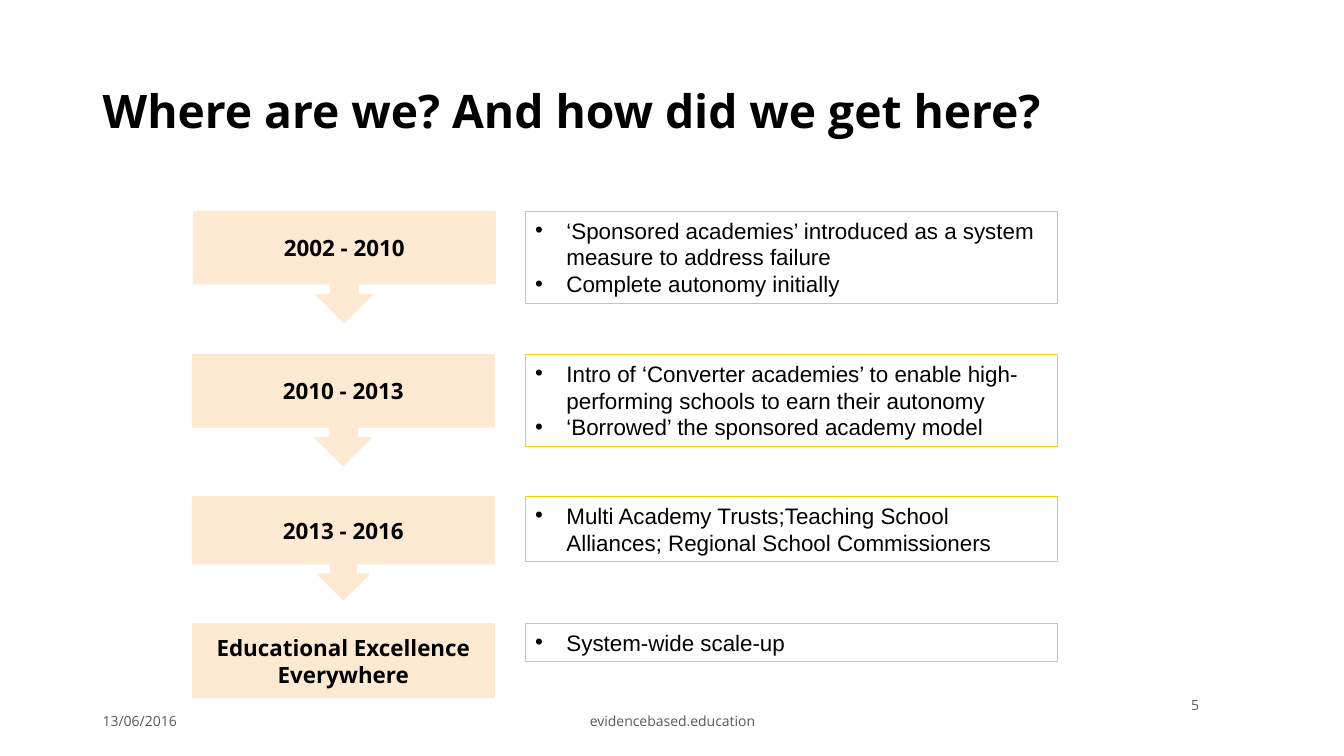
from lxml import etree
from pptx import Presentation
from pptx import util as u
from pptx.dml.color import RGBColor
from pptx.enum import shapes, text
from pptx.oxml.ns import qn

theme = {
    "peach": RGBColor.from_string("FEE9D2"),
    "gold": RGBColor.from_string("FFCA08"),
    "black": RGBColor.from_string("000000"),
    "gray": RGBColor.from_string("595959"),
    "head": {"name": "Open Sans", "size": u.Pt(33), "bold": True},
    "label": {"name": "Open Sans", "size": u.Pt(16), "bold": True},
    "body": {"name": "Arial", "size": u.Pt(16), "bold": False},
    "foot": {"name": "Open Sans", "size": u.Pt(10), "bold": False},
}
left, center, right = text.PP_ALIGN.LEFT, text.PP_ALIGN.CENTER, text.PP_ALIGN.RIGHT
middle, top = text.MSO_ANCHOR.MIDDLE, text.MSO_ANCHOR.TOP
rect = shapes.MSO_SHAPE.RECTANGLE
arrow = shapes.MSO_SHAPE.DOWN_ARROW_CALLOUT


def write(shape, lines, style, color="black", align=left, anchor=middle, bullet=False):
    frame = shape.text_frame
    frame.word_wrap = True
    frame.vertical_anchor = anchor
    for i, line in enumerate(lines):
        para = frame.add_paragraph() if i else frame.paragraphs[0]
        para.alignment = align
        if bullet:
            props = para._p.get_or_add_pPr()
            props.set("marL", str(u.Inches(0.31)))
            props.set("indent", str(-u.Inches(0.31)))
            etree.SubElement(props, qn("a:buFont")).set("typeface", "Arial")
            etree.SubElement(props, qn("a:buChar")).set("char", "•")
        run = para.add_run()
        run.text = line
        for key, value in theme[style].items():
            setattr(run.font, key, value)
        run.font.color.rgb = theme[color]


def block(kind, x, y, w, h, line, weight):
    shape = slide.shapes.add_shape(kind, *map(u.Inches, (x, y, w, h)))
    shape.shadow.inherit = False
    shape.fill.background()
    shape.line.color.rgb = theme[line]
    shape.line.width = u.Pt(weight)
    return shape


deck = Presentation()
deck.slide_width, deck.slide_height = u.Inches(13.33), u.Inches(7.5)
slide = deck.slides.add_slide(deck.slide_layouts[6])

title = slide.shapes.add_textbox(*map(u.Inches, (0.92, 0.4, 11.5, 1.45)))
write(title, ["Where are we? And how did we get here?"], "head")
title.text_frame.paragraphs[0].line_spacing = 0.9

footer = [
    (0.92, 6.95, 3, "13/06/2016", left),
    (4.42, 6.95, 4.5, "evidencebased.education", center),
    (8.99, 6.79, 3, "5", right),
]
for x, y, w, words, align in footer:
    box = slide.shapes.add_textbox(*map(u.Inches, (x, y, w, 0.4)))
    write(box, [words], "foot", "gray", align)

stages = [
    (arrow, 1.92, 2.1, 1.1, "2002 - 2010", 0.91, [
        "‘Sponsored academies’ introduced as a system measure to address failure",
        "Complete autonomy initially"]),
    (arrow, 1.91, 3.52, 1.1, "2010 - 2013", 0.91, [
        "Intro of ‘Converter academies’ to enable high-performing schools to earn their autonomy",
        "‘Borrowed’ the sponsored academy model"]),
    (arrow, 1.91, 4.93, 1.02, "2013 - 2016", 0.64, [
        "Multi Academy Trusts;Teaching School Alliances; Regional School Commissioners"]),
    (rect, 1.91, 6.19, 0.73, "Educational Excellence Everywhere", 0.37, [
        "System-wide scale-up"]),
]
for kind, x, y, tall, label, high, notes in stages:
    stage = block(kind, x, y, 2.99, tall, "peach", 1)
    stage.fill.solid()
    stage.fill.fore_color.rgb = theme["peach"]
    write(stage, [label], "label", align=center)
    detail = block(rect, 5.21, y, 5.28, high, "gold", 0.75)
    write(detail, notes, "body", anchor=top, bullet=True)

deck.save("out.pptx")
